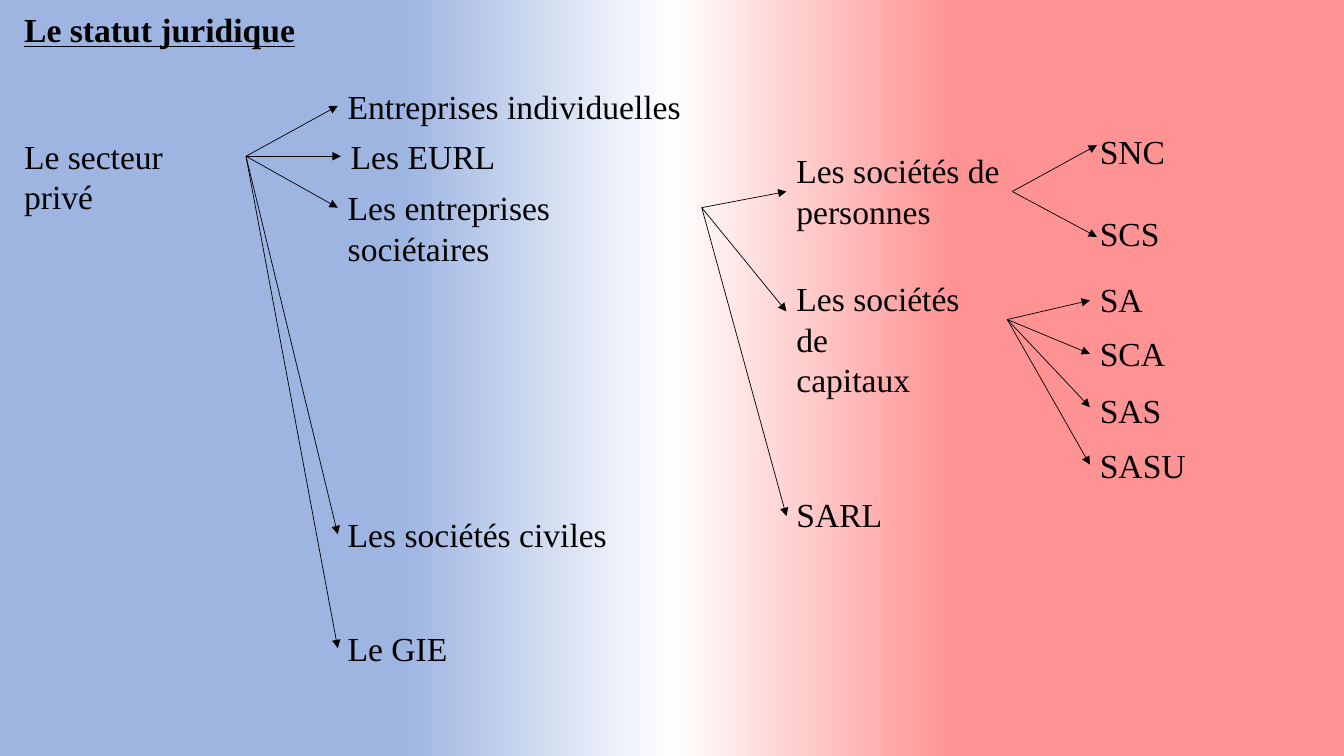
from dataclasses import dataclass

from lxml import etree
from pptx import Presentation
from pptx.dml.color import RGBColor
from pptx.enum.shapes import MSO_CONNECTOR
from pptx.enum.text import MSO_ANCHOR, MSO_AUTO_SIZE, PP_ALIGN
from pptx.oxml.ns import qn
from pptx.util import Inches, Pt

STRAIGHT = MSO_CONNECTOR.STRAIGHT
LEFT = PP_ALIGN.LEFT
TOP = MSO_ANCHOR.TOP
GROW = MSO_AUTO_SIZE.SHAPE_TO_FIT_TEXT
TITLE_ONLY = 5
LINE_HEIGHT = 0.5
TWO_LINES = 0.91


@dataclass(frozen=True)
class Theme:
    font: str = "Times New Roman"
    size: float = 24
    ink: str = "000000"
    arrow_width: float = 0.5
    # position in percent, colour, opacity in percent
    background: tuple = ((30, "9EB5E2", 100), (50, "FFFFFF", 0), (71, "FF9393", 100))


THEME = Theme()

# Each branch: the arrows' common start, then (label, label box, arrow tip).
# A box is left, top, width, height.
SECTOR_BRANCH = ((2.44, 1.55), [
    ("Entreprises individuelles", (3.35, 0.8, 3.86, LINE_HEIGHT), (3.35, 1.05)),
    ("Les EURL", (3.38, 1.3, 2.96, LINE_HEIGHT), (3.38, 1.55)),
    ("Les entreprises sociétaires", (3.35, 1.81, 3.61, LINE_HEIGHT), (3.35, 2.06)),
    ("Les sociétés civiles", (3.35, 5.05, 2.93, LINE_HEIGHT), (3.35, 5.3)),
    ("Le GIE", (3.35, 6.18, 2.54, LINE_HEIGHT), (3.35, 6.43)),
])
COMPANY_BRANCH = ((6.96, 2.06), [
    ("Les sociétés de personnes", (7.8, 1.44, 2.23, TWO_LINES), (7.8, 1.9)),
    ("Les sociétés de\ncapitaux", (7.8, 2.71, 2.19, TWO_LINES), (7.8, 3.09)),
    ("SARL", (7.8, 4.85, 2.05, LINE_HEIGHT), (7.8, 5.12)),
])
PARTNERSHIP_BRANCH = ((10.04, 1.9), [
    ("SNC", (10.81, 1.25, 1.03, LINE_HEIGHT), (10.88, 1.44)),
    ("SCS", (10.81, 2.06, 1.19, LINE_HEIGHT), (10.88, 2.35)),
])
CAPITAL_BRANCH = ((9.99, 3.17), [
    ("SA", (10.81, 2.72, 1.12, LINE_HEIGHT), (10.81, 2.98)),
    ("SCA", (10.81, 3.25, 1.04, LINE_HEIGHT), (10.81, 3.51)),
    ("SAS", (10.81, 3.82, 1.57, LINE_HEIGHT), (10.81, 4.04)),
    ("SASU", (10.81, 4.36, 1.12, LINE_HEIGHT), (10.81, 4.61)),
])


def paint_background(slide):
    fill = slide.background.fill
    fill.gradient()
    fill.gradient_angle = 0
    stops = next(slide.element.iter(qn("a:gsLst")))
    for stop in list(stops):
        stops.remove(stop)
    for position, color, opacity in THEME.background:
        stop = etree.SubElement(stops, qn("a:gs"), pos=str(position * 1000))
        rgb = etree.SubElement(stop, qn("a:srgbClr"), val=color)
        if opacity < 100:
            etree.SubElement(rgb, qn("a:alpha"), val=str(opacity * 1000))


def write_text(shape, text, *, bold=False, underline=False):
    frame = shape.text_frame
    frame.text = text
    frame.word_wrap = True
    frame.auto_size = GROW
    frame.vertical_anchor = TOP
    for paragraph in frame.paragraphs:
        paragraph.alignment = LEFT
        for run in paragraph.runs:
            font = run.font
            font.name = THEME.font
            font.size = Pt(THEME.size)
            font.color.rgb = RGBColor.from_string(THEME.ink)
            font.bold = bold
            font.underline = underline


def set_title(slide, text, box):
    title = slide.shapes.title
    title.left, title.top, title.width, title.height = map(Inches, box)
    write_text(title, text, bold=True, underline=True)


def add_label(slide, text, box):
    write_text(slide.shapes.add_textbox(*map(Inches, box)), text)


def add_arrow(slide, start, tip):
    arrow = slide.shapes.add_connector(STRAIGHT, *map(Inches, (*start, *tip)))
    arrow.line.color.rgb = RGBColor.from_string(THEME.ink)
    arrow.line.width = Pt(THEME.arrow_width)
    properties = arrow.element.spPr
    etree.SubElement(properties.find(qn("a:ln")), qn("a:tailEnd"), type="triangle")
    etree.SubElement(properties, qn("a:effectLst"))


def add_branch(slide, start, children):
    for text, box, tip in children:
        add_arrow(slide, start, tip)
        add_label(slide, text, box)


def main():
    presentation = Presentation()
    presentation.slide_width = Inches(13.33)
    presentation.slide_height = Inches(7.5)
    slide = presentation.slides.add_slide(presentation.slide_layouts[TITLE_ONLY])
    paint_background(slide)
    set_title(slide, "Le statut juridique", (0.14, 0.04, 3.54, LINE_HEIGHT))
    add_label(slide, "Le secteur privé", (0.14, 1.3, 2.3, LINE_HEIGHT))
    for branch in (SECTOR_BRANCH, COMPANY_BRANCH, PARTNERSHIP_BRANCH, CAPITAL_BRANCH):
        add_branch(slide, *branch)
    presentation.save("out.pptx")


if __name__ == "__main__":
    main()
